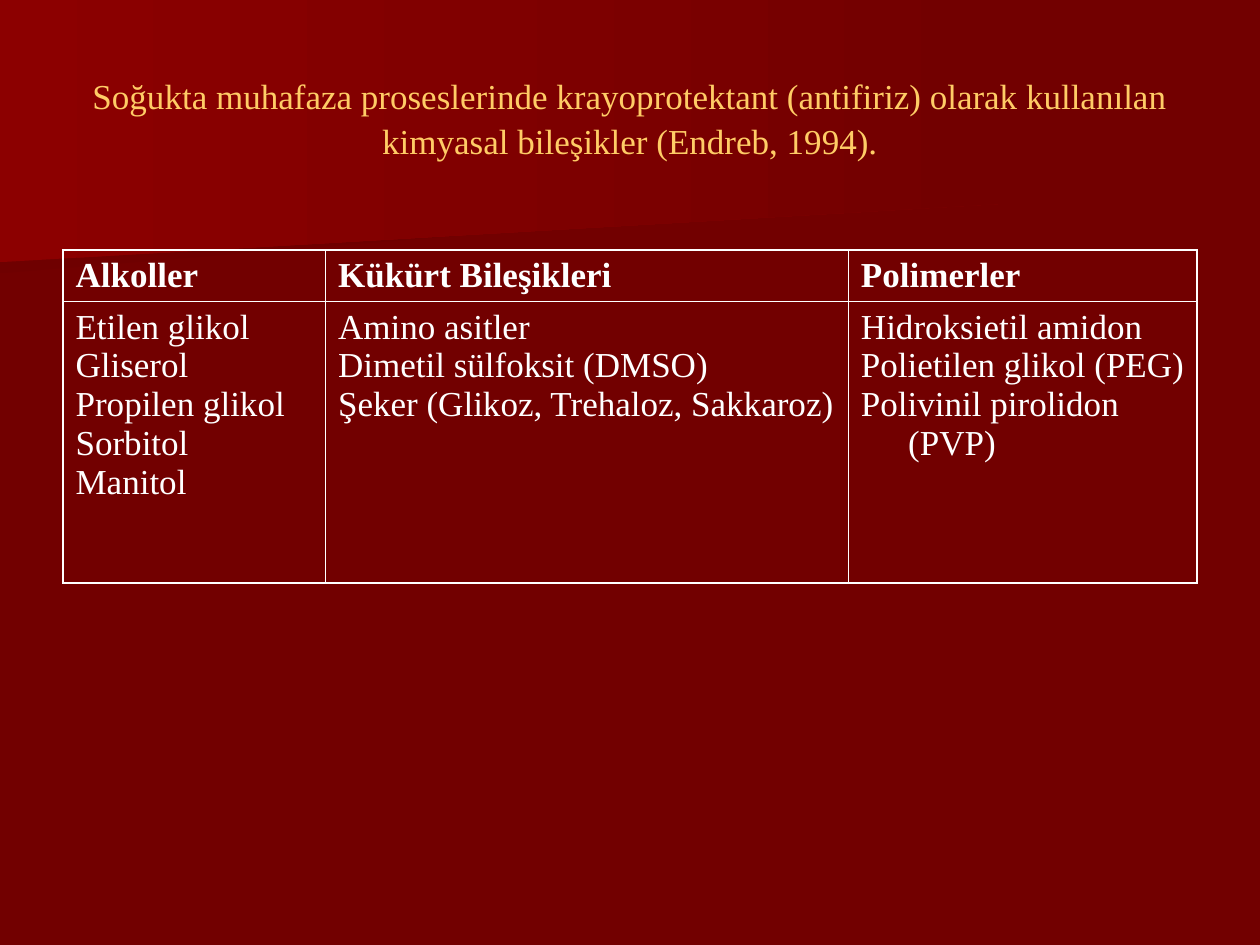
"""Builds a slide with a table of cryoprotectant compounds used in cold storage."""
from dataclasses import dataclass

from lxml import etree
from pptx import Presentation, util as u
from pptx.dml.color import RGBColor
from pptx.enum import text
from pptx.oxml.ns import qn

TITLE = ("Soğukta muhafaza proseslerinde krayoprotektant (antifiriz) olarak "
         "kullanılan kimyasal bileşikler (Endreb, 1994).")
COLUMNS = [
    ("Alkoller", 150, text.PP_ALIGN.JUSTIFY,
     ["Etilen glikol", "Gliserol", "Propilen glikol", "Sorbitol", "Manitol"]),
    ("Kükürt Bileşikleri", 298.8, text.PP_ALIGN.LEFT,
     ["Amino asitler", "Dimetil sülfoksit (DMSO)", "Şeker (Glikoz, Trehaloz, Sakkaroz)"]),
    ("Polimerler", 199.2, text.PP_ALIGN.LEFT,
     ["Hidroksietil amidon", "Polietilen glikol (PEG)", "Polivinil pirolidon (PVP)"]),
]
ROW_HEIGHTS = (29.3, 161)
BANDS = [
    ([(560.2, 110.2), (0, 156.2), (0, 72.7), (560.9, 72.7), (560.2, 92.2)], "6F0000"),
    ([(570.2, 116.6), (0, 149.8), (0, 0), (570.2, 0)], "8C0000"),
]


@dataclass(frozen=True)
class Theme:
    font: str = "Times New Roman"
    size: float = 20
    ground: str = "720000"
    heading: str = "FFCC66"
    ink: str = "FFFFFF"
    border: float = 1
    hanging: float = 27


THEME = Theme()


def write(frame, lines, color=THEME.ink, bold=False, align=text.PP_ALIGN.LEFT,
          hanging=0, spacing=1.0):
    for index, line in enumerate(lines):
        para = frame.add_paragraph() if index else frame.paragraphs[0]
        para.alignment = align
        para.line_spacing = spacing
        para.space_before = para.space_after = u.Pt(0)
        if hanging:
            properties = para._p.get_or_add_pPr()
            properties.set("marL", str(u.Pt(hanging)))
            properties.set("indent", str(-u.Pt(hanging)))
        span = para.add_run()
        span.text = line
        span.font.name = THEME.font
        span.font.size = u.Pt(THEME.size)
        span.font.bold = bold
        span.font.color.rgb = RGBColor.from_string(color)


def add_band(page, points, start_color):
    corners = [(u.Pt(x), u.Pt(y)) for x, y in points]
    builder = page.shapes.build_freeform(*corners[0])
    builder.add_line_segments(corners[1:], close=True)
    band = builder.convert_to_shape()
    band.shadow.inherit = False
    band.line.fill.background()
    band.fill.gradient()
    band.fill.gradient_angle = 0
    for stop, color in zip(band.fill.gradient_stops, (start_color, THEME.ground)):
        stop.color.rgb = RGBColor.from_string(color)


def style_cell(cell):
    cell.fill.background()
    properties = cell._tc.get_or_add_tcPr()
    for index, side in enumerate(("lnL", "lnR", "lnT", "lnB")):
        line = etree.Element(qn(f"a:{side}"), w=str(u.Pt(THEME.border)))
        fill = etree.SubElement(line, qn("a:solidFill"))
        etree.SubElement(fill, qn("a:srgbClr"), val=THEME.ink)
        properties.insert(index, line)


def add_compounds(page):
    width = sum(column[1] for column in COLUMNS)
    table = page.shapes.add_table(len(ROW_HEIGHTS), len(COLUMNS), u.Pt(36), u.Pt(142.8),
                                  u.Pt(width), u.Pt(sum(ROW_HEIGHTS))).table
    table.first_row = table.horz_banding = False
    for row, height in zip(table.rows, ROW_HEIGHTS):
        row.height = u.Pt(height)
    for index, (heading, width, align, compounds) in enumerate(COLUMNS):
        table.columns[index].width = u.Pt(width)
        head, body = table.cell(0, index), table.cell(1, index)
        write(head.text_frame, [heading], bold=True, hanging=THEME.hanging)
        write(body.text_frame, compounds, align=align, hanging=THEME.hanging)
        for cell in (head, body):
            style_cell(cell)


def add_title(page):
    title = page.shapes.title
    title.left, title.top, title.width, title.height = map(u.Pt, (36, 21.6, 648, 90))
    frame = title.text_frame
    frame.word_wrap = True
    frame.auto_size = text.MSO_AUTO_SIZE.NONE
    frame.vertical_anchor = text.MSO_ANCHOR.MIDDLE
    write(frame, [TITLE], color=THEME.heading, align=text.PP_ALIGN.CENTER, spacing=1.08)
    page.shapes._spTree.append(title._element)


def main():
    deck = Presentation()
    deck.slide_width, deck.slide_height = u.Pt(720), u.Pt(540)
    page = deck.slides.add_slide(deck.slide_layouts[5])
    page.background.fill.solid()
    page.background.fill.fore_color.rgb = RGBColor.from_string(THEME.ground)
    for points, start_color in BANDS:
        add_band(page, points, start_color)
    add_compounds(page)
    add_title(page)
    deck.save("out.pptx")


if __name__ == "__main__":
    main()
